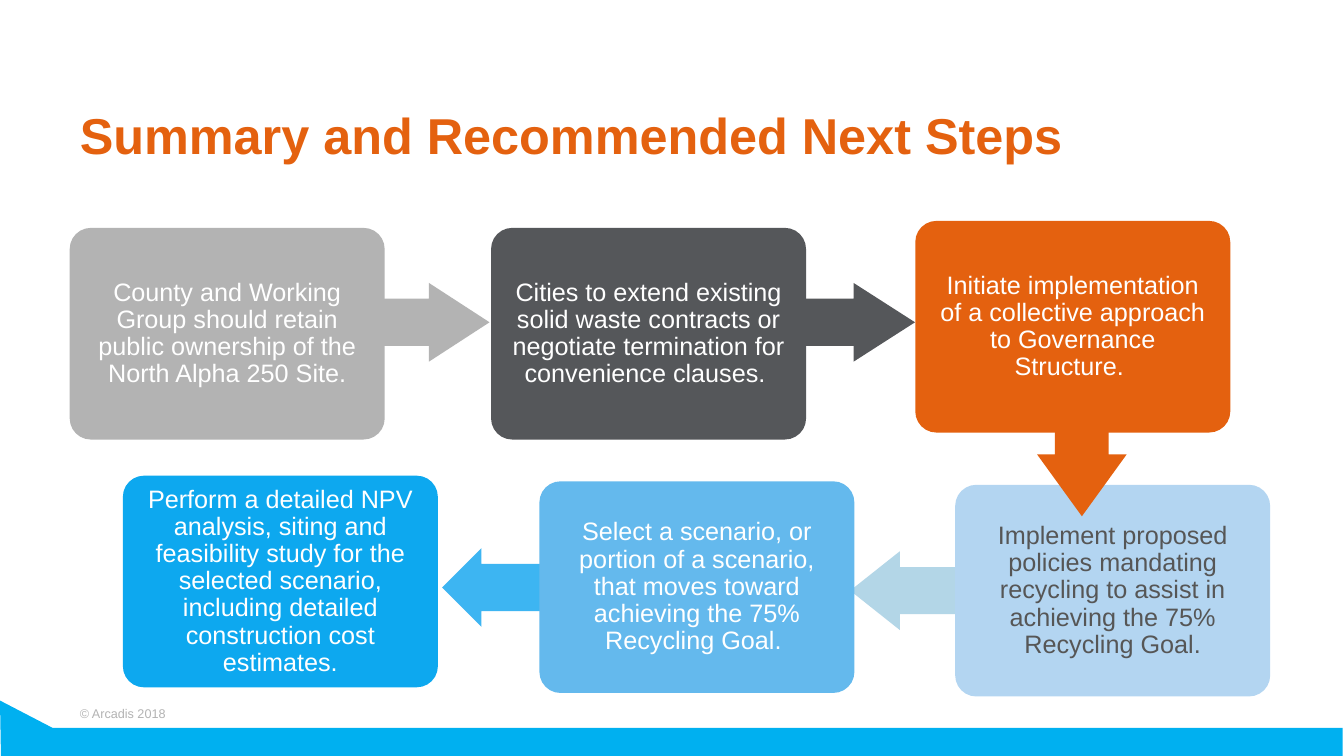
from pptx import Presentation
from pptx.dml.color import RGBColor
from pptx.enum import shapes as kinds, text
from pptx.util import Pt

COLORS = {
    "white": "FFFFFF", "gray": "B3B3B3", "charcoal": "55575A", "orange": "E4610F",
    "ink": "565656", "pale": "B3D5F1", "sky": "64B9ED", "blue": "0DA8EF",
    "pale_arrow": "B3D6E7", "sky_arrow": "3DB5F2", "band": "00B0F0",
}
PRESETS = kinds.MSO_SHAPE
STEP_WIDTH, STEP_HEIGHT = 225, 151.2

STEPS = [
    (0, 5, "gray", "white",
     "County and Working Group should retain public ownership of the North Alpha 250 Site."),
    (301, 5, "charcoal", "white",
     "Cities to extend existing solid waste contracts or negotiate termination for convenience clauses. "),
    (604, 0, "orange", "white",
     "Initiate implementation of a collective approach to Governance Structure. "),
    (632.5, 188.5, "pale", "ink",
     "Implement proposed policies mandating recycling to assist in achieving the 75% Recycling Goal."),
    (335.5, 186, "sky", "white",
     "Select a scenario, or portion of a scenario, that moves toward achieving the 75% Recycling Goal. "),
    (38, 182, "blue", "white",
     "Perform a detailed NPV analysis, siting and feasibility study for the selected scenario, "
     "including detailed construction cost estimates."),
]
SIDE_ARROWS = [
    (PRESETS.RIGHT_ARROW, 213.5, 44.3, 86.4, 56.2, 0.77, "gray"),
    (PRESETS.RIGHT_ARROW, 516, 44.3, 87.8, 56.2, 0.78, "charcoal"),
    (PRESETS.LEFT_ARROW, 557.5, 236, 87.8, 56.2, 0.63, "pale_arrow"),
    (PRESETS.LEFT_ARROW, 266, 233.7, 87.8, 56.2, 0.5, "sky_arrow"),
]
DOWN_ARROW = (PRESETS.DOWN_ARROW, 691, 123, 64, 88, 0.69, "orange")


def color(name):
    return RGBColor.from_string(COLORS[name])


def paint(shape, fill):
    shape.shadow.inherit = False
    shape.fill.solid()
    shape.fill.fore_color.rgb = color(fill)
    shape.line.fill.background()


def set_margins(frame, margin):
    frame.margin_left = frame.margin_right = Pt(margin)
    frame.margin_top = frame.margin_bottom = Pt(margin)


def write(frame, content, size, ink, align, bold=False):
    frame.text = content
    paragraph = frame.paragraphs[0]
    paragraph.alignment = align
    paragraph.line_spacing = 0.9
    font = paragraph.runs[0].font
    font.name, font.size, font.bold = "Arial", Pt(size), bold
    font.color.rgb = color(ink)


def add_title(slide, left, top, width, height):
    title = slide.shapes.title
    title.left, title.top, title.width, title.height = Pt(left), Pt(top), Pt(width), Pt(height)
    frame = title.text_frame
    frame.auto_size = text.MSO_AUTO_SIZE.NONE
    frame.vertical_anchor = text.MSO_ANCHOR.TOP
    set_margins(frame, 0)
    write(frame, "Summary and Recommended Next Steps", 36, "orange", text.PP_ALIGN.LEFT, True)


def add_footer(slide, left, top, width, height):
    notice = slide.shapes.add_textbox(Pt(left + 50), Pt(top + 1), Pt(77), Pt(18))
    frame = notice.text_frame
    frame.word_wrap = False
    frame.vertical_anchor = text.MSO_ANCHOR.MIDDLE
    write(frame, "© Arcadis 2018", 9, "gray", text.PP_ALIGN.LEFT)

    right, bottom, edge = left + width, top + height, top + 19.5
    outline = slide.shapes.build_freeform(Pt(left), Pt(top))
    corners = [(left + 37.5, edge), (right, edge), (right, bottom), (left + 0.7, bottom)]
    outline.add_line_segments([(Pt(x), Pt(y)) for x, y in corners], close=True)
    paint(outline.convert_to_shape(), "band")


def add_arrow(slide, left, top, arrow):
    preset, x, y, width, height, head, fill = arrow
    shape = slide.shapes.add_shape(preset, Pt(left + x), Pt(top + y), Pt(width), Pt(height))
    shape.adjustments[0] = 0.6
    shape.adjustments[1] = head
    paint(shape, fill)


def add_step(slide, left, top, step):
    x, y, fill, ink, content = step
    shape = slide.shapes.add_shape(PRESETS.ROUNDED_RECTANGLE, Pt(left + x), Pt(top + y),
                                   Pt(STEP_WIDTH), Pt(STEP_HEIGHT))
    shape.adjustments[0] = 0.1
    paint(shape, fill)
    frame = shape.text_frame
    frame.word_wrap = True
    frame.vertical_anchor = text.MSO_ANCHOR.MIDDLE
    set_margins(frame, 9.4)
    write(frame, content, 18, ink, text.PP_ALIGN.CENTER)


def add_process(slide, left, top):
    for arrow in SIDE_ARROWS:
        add_arrow(slide, left, top, arrow)
    for step in STEPS:
        add_step(slide, left, top, step)
    add_arrow(slide, left, top, DOWN_ARROW)


def main():
    presentation = Presentation()
    presentation.slide_width, presentation.slide_height = Pt(960), Pt(540)
    slide = presentation.slides.add_slide(presentation.slide_layouts[5])
    add_title(slide, 57, 79.2, 846.7, 49.7)
    add_footer(slide, 0, 500.4, 959, 39.6)
    add_process(slide, 49.8, 157.8)
    presentation.save("out.pptx")


if __name__ == "__main__":
    main()
